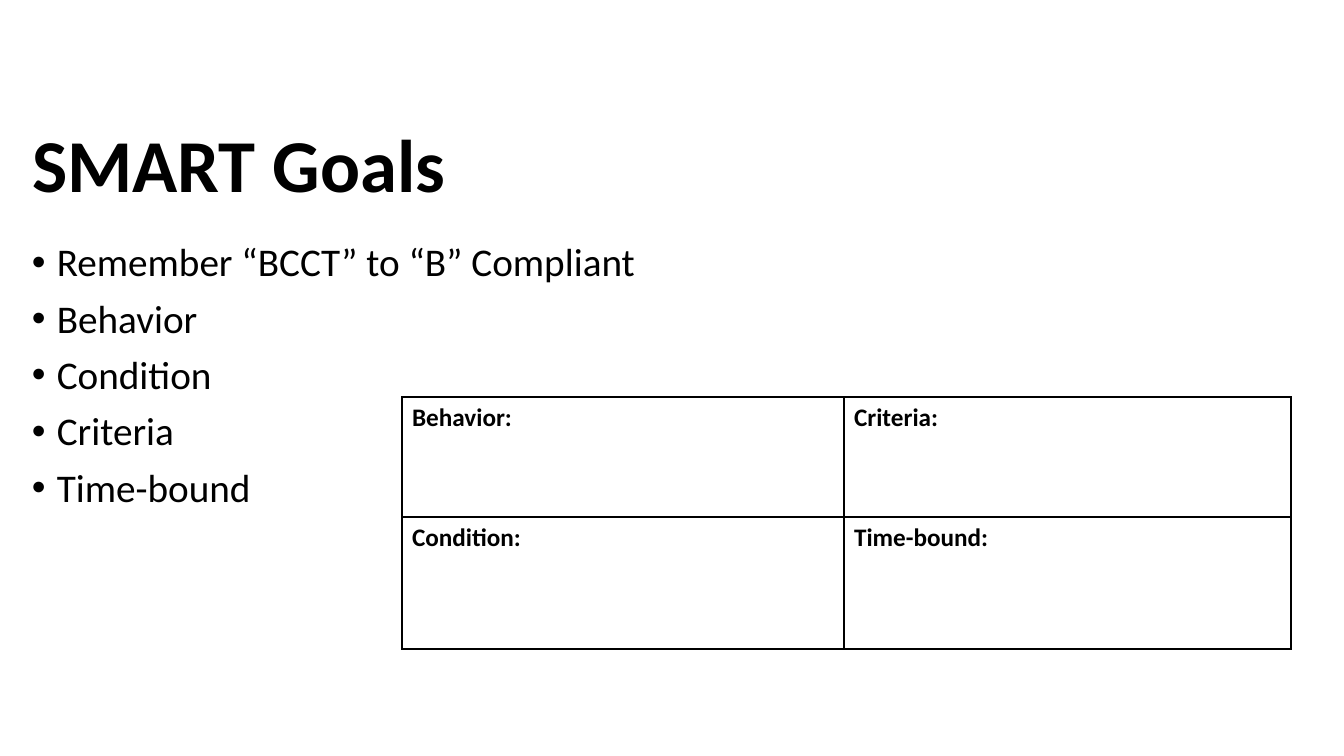
from lxml.etree import SubElement
from pptx import Presentation
from pptx.dml.color import RGBColor
from pptx.enum.text import MSO_ANCHOR, MSO_AUTO_SIZE, PP_ALIGN
from pptx.oxml import parse_xml
from pptx.oxml.ns import nsdecls, qn
from pptx.util import Emu, Pt

COLORS = {"text": "000000", "border": "000000", "background": "FFFFFF"}
TITLE = "SMART Goals"
REMINDERS = ["Remember “BCCT” to “B” Compliant", "Behavior", "Condition",
             "Criteria", "Time-bound"]
GOAL_GRID = [["Behavior:", "Criteria:"], ["Condition:", "Time-bound:"]]


def px(length):
    return Emu(round(length * 914400 / 100.8))


class GoalSlide:
    font_name = "Calibri"
    line_spacing = 0.9

    def __init__(self, deck):
        self.slide = deck.slides.add_slide(deck.slide_layouts[5])
        background = self.slide.background.fill
        background.solid()
        background.fore_color.rgb = RGBColor.from_string(COLORS["background"])

    def style(self, paragraph, size, bold=False):
        paragraph.alignment = PP_ALIGN.LEFT
        for run in paragraph.runs:
            run.font.name = self.font_name
            run.font.size = Pt(size)
            run.font.bold = bold
            run.font.color.rgb = RGBColor.from_string(COLORS["text"])

    def title(self, text, left, top, width, height):
        heading = self.slide.shapes.title
        heading.left, heading.top = px(left), px(top)
        heading.width, heading.height = px(width), px(height)
        frame = heading.text_frame
        frame.text = text
        frame.auto_size = MSO_AUTO_SIZE.NONE
        frame.vertical_anchor = MSO_ANCHOR.MIDDLE
        frame.paragraphs[0].line_spacing = self.line_spacing
        self.style(frame.paragraphs[0], 53.3, bold=True)

    def bullets(self, items, left, top, width, height):
        box = self.slide.shapes.add_textbox(px(left), px(top), px(width), px(height))
        frame = box.text_frame
        frame.word_wrap = True
        frame.text = "\n".join(items)
        for index, paragraph in enumerate(frame.paragraphs):
            properties = paragraph._p.get_or_add_pPr()
            properties.set("marL", str(px(25)))
            properties.set("indent", str(-px(25)))
            SubElement(properties, qn("a:buFont")).set("typeface", "Arial")
            SubElement(properties, qn("a:buChar")).set("char", "•")
            paragraph.line_spacing = self.line_spacing
            paragraph.space_before = Pt(10 if index else 0)
            self.style(paragraph, 28)

    def table(self, labels, left, top, widths, heights):
        grid = self.slide.shapes.add_table(
            len(heights), len(widths), px(left), px(top),
            px(sum(widths)), px(sum(heights))).table
        grid.first_row = grid.horz_banding = False
        for column, width in zip(grid.columns, widths):
            column.width = px(width)
        for row, height, row_labels in zip(grid.rows, heights, labels):
            row.height = px(height)
            for cell, label in zip(row.cells, row_labels):
                cell.text = label
                self.style(cell.text_frame.paragraphs[0], 18, bold=True)
                cell.fill.background()
                self.outline(cell)

    def outline(self, cell):
        properties = cell._tc.get_or_add_tcPr()
        for position, side in enumerate(("lnL", "lnR", "lnT", "lnB")):
            properties.insert(position, parse_xml(
                f'<a:{side} {nsdecls("a")} w="{Pt(1)}"><a:solidFill>'
                f'<a:srgbClr val="{COLORS["border"]}"/></a:solidFill></a:{side}>'))


def main():
    deck = Presentation()
    deck.slide_width, deck.slide_height = px(1344), px(756)
    goals = GoalSlide(deck)
    goals.title(TITLE, 22, 109, 1299, 118)
    goals.bullets(REMINDERS, 22, 238, 1299, 487)
    goals.table(GOAL_GRID, 402, 397, widths=(442, 447), heights=(120, 132))
    deck.save("out.pptx")


if __name__ == "__main__":
    main()
